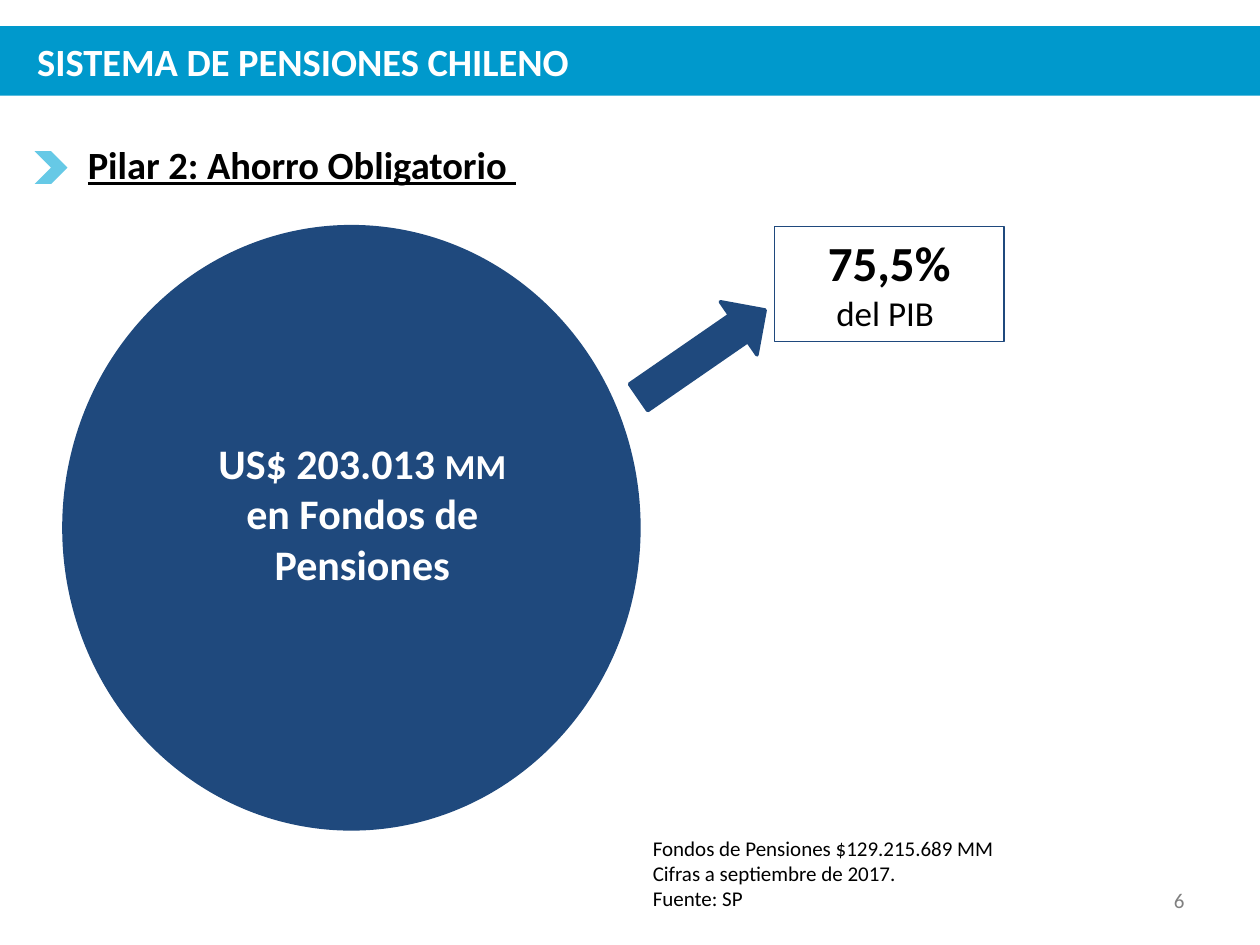
import pptx
import pptx.dml.color
import pptx.enum.shapes
import pptx.enum.text
import pptx.oxml.ns
import pptx.util
from lxml import etree
from pptx.util import Cm

COLORS = {
    "banner": "0099CC",
    "chevron": "00A6D6",
    "navy": "1F497D",
    "white": "FFFFFF",
    "black": "000000",
    "gray": "808080",
}
FONT = "Calibri"
SHAPES = pptx.enum.shapes.MSO_SHAPE
ALIGN = pptx.enum.text.PP_ALIGN
ANCHOR = pptx.enum.text.MSO_ANCHOR


def rgb(name):
    return pptx.dml.color.RGBColor.from_string(COLORS[name])


def add_shape(slide, kind, box, fill=None, line=None, line_width=0.75):
    shape = slide.shapes.add_shape(kind, *map(Cm, box))
    shape.shadow.inherit = False
    if fill:
        shape.fill.solid()
        shape.fill.fore_color.rgb = rgb(fill)
    else:
        shape.fill.background()
    if line:
        shape.line.color.rgb = rgb(line)
        shape.line.width = pptx.util.Pt(line_width)
    else:
        shape.line.fill.background()
    return shape


def set_opacity(shape, percent):
    color = shape.fill._xPr.find(".//" + pptx.oxml.ns.qn("a:srgbClr"))
    alpha = etree.SubElement(color, pptx.oxml.ns.qn("a:alpha"))
    alpha.set("val", str(percent * 1000))


def write_paragraph(paragraph, text, size, color="black", bold=False,
                    underline=None, align=ALIGN.LEFT):
    paragraph.text = text
    paragraph.alignment = align
    font = paragraph.font
    font.name = FONT
    font.size = pptx.util.Pt(size)
    font.bold = bold
    font.underline = underline
    font.color.rgb = rgb(color)


def add_text(slide, box, lines, size, anchor=ANCHOR.TOP, **style):
    """Add a wrapping text box with one paragraph for each line."""
    frame = slide.shapes.add_textbox(*map(Cm, box)).text_frame
    frame.word_wrap = True
    frame.vertical_anchor = anchor
    for index, line in enumerate(lines):
        paragraph = frame.add_paragraph() if index else frame.paragraphs[0]
        write_paragraph(paragraph, line, size, **style)


def add_header(slide):
    add_shape(slide, SHAPES.RECTANGLE, (0, 0.53, 25.4, 1.4), "banner")
    add_text(slide, (0.5, 0.53, 22.86, 1.4), ["SISTEMA DE PENSIONES CHILENO"], 22,
             ANCHOR.MIDDLE, color="white", bold=True)
    chevron = add_shape(slide, SHAPES.CHEVRON, (0.7, 3.05, 0.66, 0.66), "chevron")
    set_opacity(chevron, 60)
    add_text(slide, (1.52, 2.72, 22.17, 1.19), ["Pilar 2: Ahorro Obligatorio "], 22,
             bold=True, underline=True, align=ALIGN.JUSTIFY)


def add_fund_circle(slide):
    add_shape(slide, SHAPES.OVAL, (1.29, 4.57, 11.59, 12.14), "navy", "navy", 2)
    label = add_shape(slide, SHAPES.RECTANGLE, (4.12, 8.69, 6.37, 4.19), "navy", "navy")
    frame = label.text_frame
    frame.word_wrap = True
    frame.vertical_anchor = ANCHOR.TOP
    paragraph = frame.paragraphs[0]
    write_paragraph(paragraph, "US$ 203.013 ", 24, "white", True, align=ALIGN.CENTER)
    unit = paragraph.add_run()
    unit.text = "MM"
    unit.font.size = pptx.util.Pt(20)
    paragraph.add_line_break()
    paragraph.add_run().text = "en Fondos de Pensiones"


def add_gdp_share(slide):
    arrow = add_shape(slide, SHAPES.RIGHT_ARROW, (12.6, 6.48, 3.1, 1.3), "navy", "navy", 2)
    arrow.rotation = 325.4
    callout = add_shape(slide, SHAPES.RECTANGLE, (15.61, 4.57, 4.63, 2.31), line="navy")
    frame = callout.text_frame
    frame.word_wrap = True
    frame.vertical_anchor = ANCHOR.TOP
    write_paragraph(frame.paragraphs[0], "75,5%", 28, bold=True, align=ALIGN.CENTER)
    write_paragraph(frame.add_paragraph(), "del PIB ", 20, align=ALIGN.CENTER)


def add_footer(slide):
    source_lines = ["Fondos de Pensiones $129.215.689 MM",
                    "Cifras a septiembre de 2017. \nFuente: SP"]
    add_text(slide, (12.91, 16.71, 7.59, 1.8), source_lines, 12)
    add_text(slide, (18.2, 17.65, 5.93, 1.01), ["6"], 12, ANCHOR.MIDDLE,
             color="gray", align=ALIGN.RIGHT)


def main():
    presentation = pptx.Presentation()
    presentation.slide_width = Cm(25.4)
    presentation.slide_height = Cm(19.05)
    slide = presentation.slides.add_slide(presentation.slide_layouts[6])
    add_header(slide)
    add_fund_circle(slide)
    add_gdp_share(slide)
    add_footer(slide)
    presentation.save("out.pptx")


if __name__ == "__main__":
    main()
